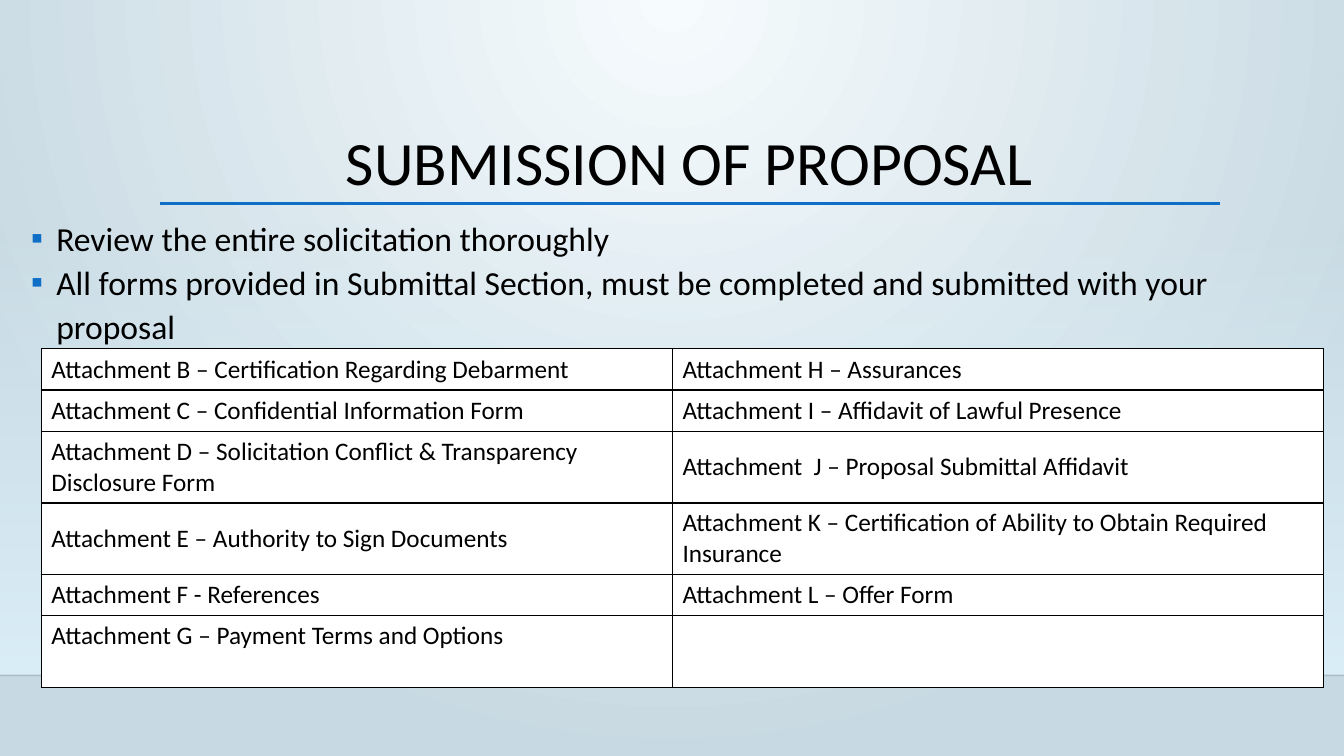
from dataclasses import dataclass

import pptx
import pptx.dml.color
import pptx.dml.fill
import pptx.enum.shapes
import pptx.enum.text
import pptx.oxml
import pptx.oxml.ns
import pptx.oxml.xmlchemy
import pptx.shapes.connector
import pptx.slide
import pptx.table
import pptx.text.text
import pptx.util

SCALE = 9144  # EMU in one px, 100 px to the inch
FONT = "Calibri"
COLORS = {
    "text": "000000",
    "accent": "0F6FC6",
    "cell": "FFFFFF",
    "border": "000000",
    "glow": "F6FBFD",
    "edge": "C7D9E2",
    "haze": "DBEFF9",
    "floor": "000001",
}


@dataclass(frozen=True)
class Rule:
    left: int
    right: int
    y: int
    color: str
    width: float
    opacity: int = 100


@dataclass(frozen=True)
class TextBlock:
    left: int
    top: int
    width: int
    height: int
    lines: tuple[str, ...]
    size: int
    spacing: float
    bulleted: bool = False


@dataclass(frozen=True)
class Row:
    height: int
    left: str
    right: str
    anchor: pptx.enum.text.MSO_ANCHOR = pptx.enum.text.MSO_ANCHOR.MIDDLE


RULES = (
    Rule(0, 1333, 670, "floor", 1, opacity=20),
    Rule(159, 1210, 202, "accent", 2.5),
)
TEXT_BLOCKS = (
    TextBlock(159, 126, 1050, 115, ("SUBMISSION OF PROPOSAL",), 44, 0.9),
    TextBlock(21, 207, 1285, 395, (
        "Review the entire solicitation thoroughly",
        "All forms provided in Submittal Section, must be completed and submitted with your proposal",
    ), 24, 1.1, bulleted=True),
)
TABLE_LEFT, TABLE_TOP = 41, 346
COLUMN_WIDTHS = (626, 646)
ONE_LINE, TWO_LINES = 41, 71
ROWS = (
    Row(ONE_LINE, "Attachment B – Certification Regarding Debarment",
        "Attachment H – Assurances"),
    Row(ONE_LINE, "Attachment C – Confidential Information Form",
        "Attachment I – Affidavit of Lawful Presence"),
    Row(TWO_LINES, "Attachment D – Solicitation Conflict & Transparency Disclosure Form",
        "Attachment  J – Proposal Submittal Affidavit"),
    Row(TWO_LINES, "Attachment E – Authority to Sign Documents",
        "Attachment K – Certification of Ability to Obtain Required Insurance"),
    Row(ONE_LINE, "Attachment F - References", "Attachment L – Offer Form"),
    Row(TWO_LINES, "Attachment G – Payment Terms and Options", "",
        pptx.enum.text.MSO_ANCHOR.TOP),
)


def px(length: int) -> pptx.util.Emu:
    return pptx.util.Emu(length * SCALE)


def rgb(name: str) -> pptx.dml.color.RGBColor:
    return pptx.dml.color.RGBColor.from_string(COLORS[name])


def xml(markup: str) -> pptx.oxml.xmlchemy.BaseOxmlElement:
    """Parse one element, declaring the drawing namespace on its first tag."""
    tag, rest = markup.split(">", 1)
    slash = "/" if tag.endswith("/") else ""
    declaration = pptx.oxml.ns.nsdecls("a")
    return pptx.oxml.parse_xml(f"{tag.rstrip('/')} {declaration}{slash}>{rest}")


def find(element: pptx.oxml.xmlchemy.BaseOxmlElement, tag: str) -> pptx.oxml.xmlchemy.BaseOxmlElement:
    return next(element.iter(pptx.oxml.ns.qn(tag)))


def set_opacity(element: pptx.oxml.xmlchemy.BaseOxmlElement, percent: int) -> None:
    find(element, "a:srgbClr").append(xml(f'<a:alpha val="{percent * 1000}"/>'))


def set_gradient(fill: pptx.dml.fill.FillFormat, owner: pptx.oxml.xmlchemy.BaseOxmlElement,
                 colors: tuple[str, str], direction: str) -> None:
    fill.gradient()
    for position, (stop, color) in enumerate(zip(fill.gradient_stops, colors)):
        stop.position = position
        stop.color.rgb = rgb(color)
    linear = find(owner, "a:lin")
    linear.getparent().replace(linear, xml(direction))


def add_run(paragraph: pptx.text.text._Paragraph, text: str, size: int) -> None:
    run = paragraph.add_run()
    run.text = text
    run.font.name = FONT
    run.font.size = pptx.util.Pt(size)
    run.font.color.rgb = rgb("text")


def add_bullet(paragraph: pptx.text.text._Paragraph) -> None:
    properties = paragraph._p.get_or_add_pPr()
    properties.set("marL", str(px(25)))
    properties.set("indent", str(px(-25)))
    properties.append(xml(f'<a:buClr><a:srgbClr val="{COLORS["accent"]}"/></a:buClr>'))
    properties.append(xml(f'<a:buFont typeface="{FONT}"/>'))
    properties.append(xml('<a:buChar char="▪"/>'))


def add_haze(slide: pptx.slide.Slide) -> None:
    shape = slide.shapes.add_shape(
        pptx.enum.shapes.MSO_SHAPE.RECTANGLE, 0, px(221), px(1333), px(449))
    shape.shadow.inherit = False
    shape.line.fill.background()
    set_gradient(shape.fill, shape._element, ("haze", "haze"),
                 '<a:lin ang="5400000" scaled="0"/>')
    set_opacity(shape._element, 0)


def add_rule(slide: pptx.slide.Slide, rule: Rule) -> None:
    connector = slide.shapes.add_connector(
        pptx.enum.shapes.MSO_CONNECTOR.STRAIGHT,
        px(rule.left), px(rule.y), px(rule.right), px(rule.y))
    connector.line.color.rgb = rgb(rule.color)
    connector.line.width = pptx.util.Pt(rule.width)
    if rule.opacity < 100:
        set_opacity(connector._element, rule.opacity)
    connector._element.spPr.append(xml("<a:effectLst/>"))


def add_text(slide: pptx.slide.Slide, block: TextBlock) -> None:
    box = slide.shapes.add_textbox(
        px(block.left), px(block.top), px(block.width), px(block.height))
    frame = box.text_frame
    frame.word_wrap = True
    for index, line in enumerate(block.lines):
        paragraph = frame.add_paragraph() if index else frame.paragraphs[0]
        if block.bulleted:
            add_bullet(paragraph)
        else:
            paragraph.alignment = pptx.enum.text.PP_ALIGN.CENTER
        paragraph.line_spacing = block.spacing
        add_run(paragraph, line, block.size)


def fill_cell(cell: pptx.table._Cell, text: str, anchor: pptx.enum.text.MSO_ANCHOR) -> None:
    cell.fill.solid()
    cell.fill.fore_color.rgb = rgb("cell")
    cell.vertical_anchor = anchor
    properties = cell._tc.get_or_add_tcPr()
    for index, side in enumerate("LRTB"):
        properties.insert(index, xml(
            f'<a:ln{side} w="12700"><a:solidFill><a:srgbClr val="{COLORS["border"]}"/>'
            f"</a:solidFill></a:ln{side}>"))
    if text:
        add_run(cell.text_frame.paragraphs[0], text, 18)


def add_attachments(slide: pptx.slide.Slide) -> None:
    table = slide.shapes.add_table(
        len(ROWS), len(COLUMN_WIDTHS), px(TABLE_LEFT), px(TABLE_TOP),
        px(sum(COLUMN_WIDTHS)), px(sum(row.height for row in ROWS))).table
    table.first_row = table.horz_banding = False
    for column, width in zip(table.columns, COLUMN_WIDTHS):
        column.width = px(width)
    for table_row, row in zip(table.rows, ROWS):
        table_row.height = px(row.height)
        for cell, text in zip(table_row.cells, (row.left, row.right)):
            fill_cell(cell, text, row.anchor)


def main() -> None:
    presentation = pptx.Presentation()
    presentation.slide_width, presentation.slide_height = px(1333), px(750)
    slide = presentation.slides.add_slide(presentation.slide_layouts[6])
    # Backdrop
    set_gradient(slide.background.fill, slide._element, ("glow", "edge"),
                 '<a:path path="circle"><a:fillToRect l="43000" r="43000" b="100000"/></a:path>')
    add_haze(slide)
    for rule in RULES:
        add_rule(slide, rule)
    # Title, bullets and attachment list
    for block in TEXT_BLOCKS:
        add_text(slide, block)
    add_attachments(slide)
    presentation.save("out.pptx")


if __name__ == "__main__":
    main()
